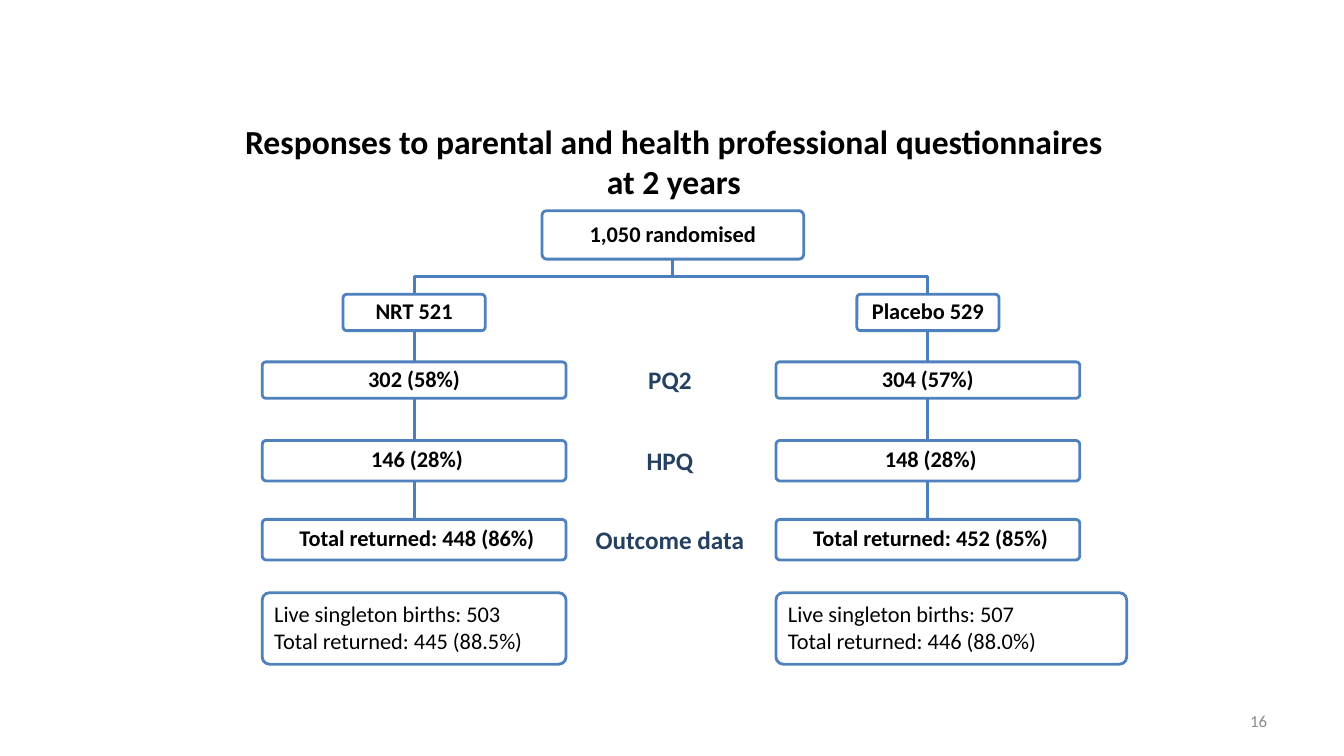
import pptx
import pptx.util
import pptx.dml.color
import pptx.enum.shapes
import pptx.enum.text
import pptx.oxml
import pptx.oxml.ns
from lxml import etree

Pt = pptx.util.Pt
RGBColor = pptx.dml.color.RGBColor
PP_ALIGN = pptx.enum.text.PP_ALIGN
ANCHOR = pptx.enum.text.MSO_ANCHOR
qn = pptx.oxml.ns.qn

TITLE = "Responses to parental and health professional questionnaires at 2 years"
ROOT = "1,050 randomised"
PAGE = "16"
# arm: centre x, name, stage results, births summary, summary width
ARMS = [
    (295.8, "NRT 521", ["302 (58%)", "146 (28%)", "Total returned: 448 (86%)"],
     "Live singleton births: 503\nTotal returned: 445 (88.5%)", 217),
    (662.8, "Placebo 529", ["304 (57%)", "148 (28%)", "Total returned: 452 (85%)"],
     "Live singleton births: 507\nTotal returned: 446 (88.0%)", 250.5),
]
# stage: label, label top, box top, box height, rightward shift of the text
STAGES = [
    ("PQ2", 257, 258.5, 26, 0),
    ("HPQ", 314.6, 314.6, 29, 2),
    ("Outcome data", 371, 371, 29, 2),
]

BLACK = RGBColor(0x00, 0x00, 0x00)
WHITE = RGBColor(0xFF, 0xFF, 0xFF)
NAVY = RGBColor(0x25, 0x40, 0x61)
GREY = RGBColor(0x8C, 0x8C, 0x8C)
BORDER = RGBColor(0x4F, 0x81, 0xBD)
LINK = RGBColor(0x4B, 0x7E, 0xBC)

ROOT_X, ROOT_TOP, ROOT_W, ROOT_H = 476.6, 150.5, 187, 34.6
BRANCH_Y = 197.3
ARM_TOP, ARM_W, ARM_H = 210.2, 101.5, 26
STAGE_W = 217
BIRTHS_TOP, BIRTHS_H = 423.4, 51
LABEL_X, LABEL_W, LABEL_H = 478.5, 125, 29


def write(sp, text, size, color, bold=True, align=PP_ALIGN.CENTER, anchor=ANCHOR.TOP):
    tf = sp.text_frame
    tf.text = text
    tf.word_wrap = True
    tf.auto_size = pptx.enum.text.MSO_AUTO_SIZE.NONE
    tf.vertical_anchor = anchor
    for p in tf.paragraphs:
        p.alignment = align
        for r in p.runs:
            r.font.name = "Calibri"
            r.font.size = Pt(size)
            r.font.bold = bold
            r.font.color.rgb = color
    return tf


def add_text(slide, box, text, size, color, **style):
    sp = slide.shapes.add_textbox(*map(Pt, box))
    write(sp, text, size, color, **style)


def add_box(slide, left, top, width, height):
    """Add an empty rounded box with a nearly opaque white fill."""
    sp = slide.shapes.add_shape(pptx.enum.shapes.MSO_SHAPE.ROUNDED_RECTANGLE,
                                Pt(left), Pt(top), Pt(width), Pt(height))
    sp.adjustments[0] = 0.1
    sp.shadow.inherit = False
    sp.fill.solid()
    sp.fill.fore_color.rgb = WHITE
    color = sp.fill._xPr.find(qn("a:solidFill"))[0]
    etree.SubElement(color, qn("a:alpha")).set("val", "90000")
    sp.line.color.rgb = BORDER
    sp.line.width = Pt(2)
    return sp


def add_node(slide, center, top, width, height, text, shift=0):
    """Add a box with one bold centred line of text."""
    sp = add_box(slide, center - width / 2, top, width, height)
    tf = write(sp, text, 16, BLACK, anchor=ANCHOR.MIDDLE)
    tf.margin_left = Pt(5 + 2 * shift)
    tf.margin_right = tf.margin_top = tf.margin_bottom = Pt(5)
    tf.paragraphs[0].line_spacing = 0.9


def add_line(slide, x1, y1, x2, y2):
    cx = slide.shapes.add_connector(pptx.enum.shapes.MSO_CONNECTOR.STRAIGHT,
                                    Pt(x1), Pt(y1), Pt(x2), Pt(y2))
    cx.line.color.rgb = LINK
    cx.line.width = Pt(2)
    etree.SubElement(cx._element.spPr, qn("a:effectLst"))


def add_arm(slide, center, name, results, births, births_w):
    add_line(slide, center, BRANCH_Y, center, ARM_TOP)
    add_node(slide, center, ARM_TOP, ARM_W, ARM_H, name)
    bottom = ARM_TOP + ARM_H
    for result, (_, _, top, height, shift) in zip(results, STAGES):
        add_line(slide, center, bottom, center, top)
        add_node(slide, center, top, STAGE_W, height, result, shift)
        bottom = top + height
    sp = add_box(slide, center - STAGE_W / 2, BIRTHS_TOP, births_w, BIRTHS_H)
    write(sp, births, 16, BLACK, bold=False, align=PP_ALIGN.LEFT)


def main():
    prs = pptx.Presentation()
    prs.slide_width, prs.slide_height = Pt(960), Pt(540)
    slide = prs.slides.add_slide(prs.slide_layouts[5])

    title = slide.shapes.title
    title.left, title.top, title.width, title.height = map(Pt, (157, 82.8, 648.7, 65.5))
    write(title, TITLE, 24, BLACK)

    add_node(slide, ROOT_X + 4, ROOT_TOP, ROOT_W, ROOT_H, ROOT)
    add_line(slide, ROOT_X + 4, ROOT_TOP + ROOT_H, ROOT_X + 4, BRANCH_Y)
    add_line(slide, ARMS[0][0], BRANCH_Y, ARMS[-1][0], BRANCH_Y)
    for arm in ARMS:
        add_arm(slide, *arm)
    for label, top, *_ in STAGES:
        add_text(slide, (LABEL_X - LABEL_W / 2, top, LABEL_W, LABEL_H), label, 18, NAVY)
    add_text(slide, (688.3, 500.4, 224, 28.8), PAGE, 12, GREY, bold=False,
             align=PP_ALIGN.RIGHT, anchor=ANCHOR.MIDDLE)
    prs.save("out.pptx")


if __name__ == "__main__":
    main()
